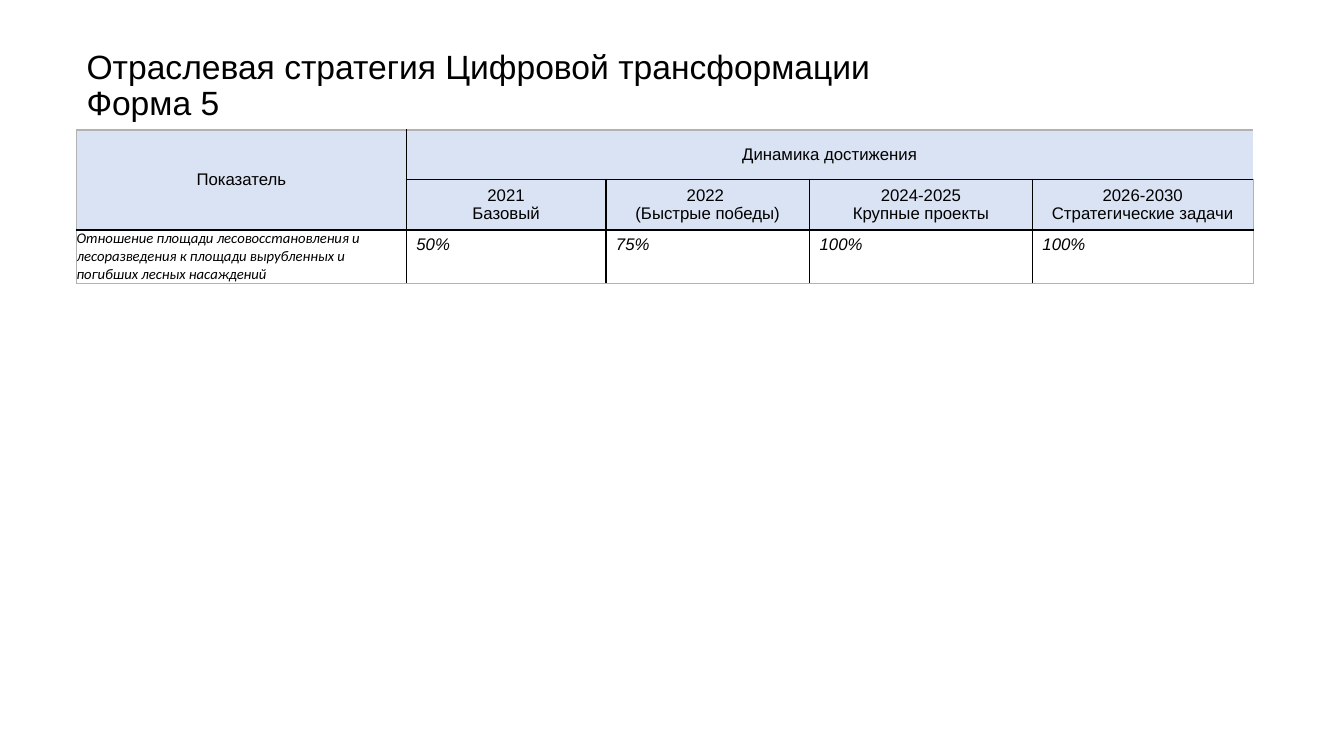
from dataclasses import dataclass

from lxml.etree import SubElement
from pptx import Presentation
from pptx.dml.color import RGBColor
from pptx.enum.text import MSO_ANCHOR as Anchor, PP_ALIGN as Align
from pptx.oxml.ns import qn
from pptx.util import Inches, Pt


@dataclass(frozen=True)
class Theme:
    ink: str = "000000"
    header_fill: str = "DAE3F3"
    frame: str = "B2B2B2"
    font: str = "Arial"
    indicator_font: str = "Calibri"
    title_size: float = 24
    body_size: float = 12
    indicator_size: float = 10.5
    thin: float = 1
    thick: float = 1.5


THEME = Theme()
TITLE = "Отраслевая стратегия Цифровой трансформации\vФорма 5"
PERIODS = ["2021\vБазовый", "2022 \v(Быстрые победы)",
           "2024-2025\vКрупные проекты", "2026-2030\vСтратегические задачи"]
ROWS = [
    ["Показатель", "Динамика достижения", "", "", ""],
    ["", *PERIODS],
    ["Отношение площади лесовосстановления и лесоразведения к площади "
     "вырубленных и погибших лесных насаждений", "50%", "75%", "100%", "100%"],
]
COLUMN_WIDTHS = [3.27, 1.98, 2.02, 2.21, 2.19]
ROW_HEIGHTS = [0.49, 0.47, 0.53]
HEADER_ROWS = 2


def write(frame, text, size=THEME.body_size, font=THEME.font, italic=False,
          align=Align.LEFT, spacing=1.0):
    frame.word_wrap = True
    paragraph = frame.paragraphs[0]
    paragraph.text = text
    paragraph.alignment = align
    paragraph.line_spacing = spacing
    for run in paragraph.runs:
        run.font.size = Pt(size)
        run.font.name = font
        run.font.italic = italic
        run.font.color.rgb = RGBColor.from_string(THEME.ink)


def add_title(slide, left, top, width, height):
    title = slide.shapes.add_textbox(*map(Inches, (left, top, width, height)))
    title.text_frame.vertical_anchor = Anchor.TOP
    write(title.text_frame, TITLE, size=THEME.title_size, spacing=0.9)


def edge_style(line, last):
    """Colour and width of a grid line: grey round the table, black inside."""
    return (THEME.frame if line in (0, last) else THEME.ink), THEME.thin


def cell_edges(row, column):
    """Yield tag, colour and width for each side not hidden by a merge."""
    for tag, line in (("a:lnL", column), ("a:lnR", column + 1)):
        if row > 0 or line in (0, 1, len(COLUMN_WIDTHS)):
            yield tag, *edge_style(line, len(COLUMN_WIDTHS))
    for tag, line in (("a:lnT", row), ("a:lnB", row + 1)):
        if column > 0 or line != 1:
            color, width = edge_style(line, len(ROW_HEIGHTS))
            yield tag, color, THEME.thick if line == HEADER_ROWS else width


def draw_edges(cell, row, column):
    """Must run before the fill, which follows the borders in the XML."""
    properties = cell._tc.get_or_add_tcPr()
    for tag, color, width in cell_edges(row, column):
        border = SubElement(properties, qn(tag), w=str(Pt(width)))
        fill = SubElement(border, qn("a:solidFill"))
        SubElement(fill, qn("a:srgbClr"), val=color)


def format_cell(cell, row, column, text):
    draw_edges(cell, row, column)
    if row < HEADER_ROWS:
        cell.fill.solid()
        cell.fill.fore_color.rgb = RGBColor.from_string(THEME.header_fill)
        cell.vertical_anchor = Anchor.MIDDLE
        write(cell.text_frame, text, align=Align.CENTER)
        return
    cell.fill.background()
    if column == 0:
        cell.margin_left = cell.margin_right = 0
        cell.margin_top = cell.margin_bottom = 0
        cell.vertical_anchor = Anchor.BOTTOM
        write(cell.text_frame, text, size=THEME.indicator_size,
              font=THEME.indicator_font, italic=True)
    else:
        write(cell.text_frame, text, italic=True)


def add_indicators(slide, left, top):
    indicators = slide.shapes.add_table(
        len(ROWS), len(COLUMN_WIDTHS), Inches(left), Inches(top),
        Inches(sum(COLUMN_WIDTHS)), Inches(sum(ROW_HEIGHTS))).table
    indicators.first_row = indicators.horz_banding = False
    for column, width in zip(indicators.columns, COLUMN_WIDTHS):
        column.width = Inches(width)
    for row, height in zip(indicators.rows, ROW_HEIGHTS):
        row.height = Inches(height)
    for r, texts in enumerate(ROWS):
        for c, text in enumerate(texts):
            format_cell(indicators.cell(r, c), r, c, text)
    indicators.cell(0, 0).merge(indicators.cell(1, 0))
    indicators.cell(0, 1).merge(indicators.cell(0, len(PERIODS)))


def main():
    deck = Presentation()
    deck.slide_width, deck.slide_height = Inches(13.33), Inches(7.5)
    slide = deck.slides.add_slide(deck.slide_layouts[6])
    add_title(slide, 0.76, 0.45, 10.39, 1.03)
    add_indicators(slide, 0.76, 1.29)
    deck.save("out.pptx")


if __name__ == "__main__":
    main()
